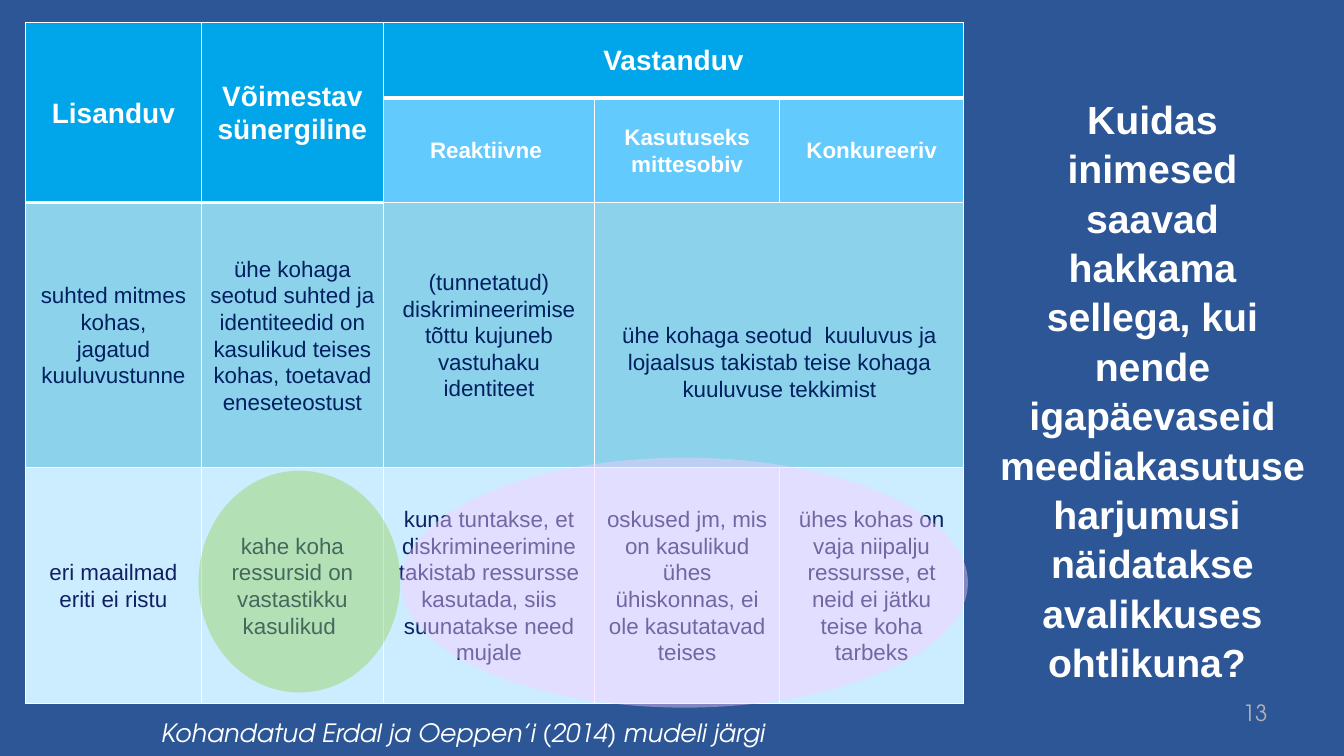
import pptx
import pptx.util
import pptx.dml.color
import pptx.enum.shapes
import pptx.enum.text
import pptx.oxml
import pptx.oxml.ns

Inches, Pt = pptx.util.Inches, pptx.util.Pt
PP_ALIGN = pptx.enum.text.PP_ALIGN
ANCHOR = pptx.enum.text.MSO_ANCHOR

COLORS = {
    "background": "2C5696", "white": "FFFFFF", "number": "B1B3B3",
    "header": "00A6E9", "subheader": "63CAFD",
    "relations": "8DD2EB", "relations_text": "002060",
    "resources": "CCECFF", "resources_text": "102064",
    "benefit": "92D050", "conflict": "FFCCFF",
}
BODY_FONT, ACCENT_FONT = "Arial", "TeX Gyre Adventor"

COLUMN_WIDTHS = [1.75, 1.8, 2.1, 1.83, 1.83]
ROW_HEIGHTS = [0.75, 1.04, 2.63, 2.34]
# Fill, text colour, size and weight of each table row
ROW_STYLES = [
    ("header", "white", 20, True),
    ("subheader", "white", 16, True),
    ("relations", "relations_text", 16, False),
    ("resources", "resources_text", 16, False),
]
# First and last cell of each merged area
MERGES = [((0, 0), (1, 0)), ((0, 1), (1, 1)), ((0, 2), (0, 4)), ((2, 3), (2, 4))]
TABLE_TEXT = [
    ["Lisanduv", "Võimestav sünergiline", "Vastanduv", None, None],
    [None, None, "Reaktiivne ", "Kasutuseks mittesobiv", "Konkureeriv"],
    ["suhted mitmes kohas,\njagatud kuuluvustunne",
     "ühe kohaga seotud suhted ja identiteedid on kasulikud teises kohas, "
     "toetavad eneseteostust",
     "(tunnetatud) diskrimineerimise tõttu kujuneb vastuhaku identiteet",
     "ühe kohaga seotud  kuuluvus ja lojaalsus takistab teise kohaga "
     "kuuluvuse tekkimist", None],
    ["eri maailmad eriti ei ristu",
     "kahe koha ressursid on vastastikku kasulikud ",
     "kuna tuntakse, et diskrimineerimine takistab ressursse kasutada, "
     "siis suunatakse need mujale",
     "oskused jm, mis on kasulikud ühes ühiskonnas, ei ole kasutatavad teises",
     "ühes kohas on vaja niipalju ressursse, et neid ei jätku teise koha tarbeks"],
]
QUESTION = ("Kuidas inimesed saavad hakkama sellega, kui nende igapäevaseid "
            "meediakasutuse harjumusi  näidatakse avalikkuses ohtlikuna? ")


def rgb(name):
    return pptx.dml.color.RGBColor.from_string(COLORS[name])


def format_text(frame, font, size, color, align, bold=False, italic=False, spacing=1):
    for paragraph in frame.paragraphs:
        paragraph.alignment = align
        paragraph.line_spacing = spacing
        for run in paragraph.runs:
            run.font.name = font
            run.font.size = Pt(size)
            run.font.bold = bold
            run.font.italic = italic
            run.font.color.rgb = rgb(color)


def set_borders(cell, widths):
    for side, width in widths.items():
        cell._tc.get_or_add_tcPr().append(pptx.oxml.parse_xml(
            f'<a:ln{side} {pptx.oxml.ns.nsdecls("a")} w="{Pt(width)}"><a:solidFill>'
            f'<a:srgbClr val="{COLORS["white"]}"/></a:solidFill></a:ln{side}>'))


def rule_below(row, col):
    """Header cells end with a thick rule, all other cells with a thin one."""
    header_end = 1 if col < 2 else 0
    return 3 if row == header_end else 1


def add_model_table(slide, left, top):
    table = slide.shapes.add_table(
        len(ROW_HEIGHTS), len(COLUMN_WIDTHS), Inches(left), Inches(top),
        Inches(sum(COLUMN_WIDTHS)), Inches(sum(ROW_HEIGHTS))).table
    table.first_row = table.horz_banding = False
    for column, width in zip(table.columns, COLUMN_WIDTHS):
        column.width = Inches(width)
    for table_row, height in zip(table.rows, ROW_HEIGHTS):
        table_row.height = Inches(height)
    for first, last in MERGES:
        table.cell(*first).merge(table.cell(*last))

    for row, (fill, color, size, bold) in enumerate(ROW_STYLES):
        for col, text in enumerate(TABLE_TEXT[row]):
            cell = table.cell(row, col)
            set_borders(cell, {"L": 1, "R": 1, "T": rule_below(row - 1, col),
                               "B": rule_below(row, col)})
            cell.fill.solid()
            cell.fill.fore_color.rgb = rgb(fill)
            cell.margin_left = cell.margin_right = Inches(0.07)
            cell.margin_top = cell.margin_bottom = 0
            cell.vertical_anchor = ANCHOR.MIDDLE
            if text:
                cell.text_frame.text = text
                format_text(cell.text_frame, BODY_FONT, size, color,
                            PP_ALIGN.CENTER, bold, spacing=1.07)
    # The shared loyalty cell sits below the middle of its row
    table.cell(2, 3).margin_top = Inches(0.53)


def add_question(slide, left, top, width, height):
    question = slide.shapes.title
    question.left, question.top = Inches(left), Inches(top)
    question.width, question.height = Inches(width), Inches(height)
    frame = question.text_frame
    frame.text = QUESTION
    frame.word_wrap = True
    frame.auto_size = pptx.enum.text.MSO_AUTO_SIZE.NONE
    frame.vertical_anchor = ANCHOR.TOP
    format_text(frame, BODY_FONT, 28, "white", PP_ALIGN.CENTER, bold=True, spacing=1.05)


def add_note(slide, box, text, size, color, align, anchor, italic=False):
    frame = slide.shapes.add_textbox(*map(Inches, box)).text_frame
    frame.word_wrap = True
    frame.vertical_anchor = anchor
    frame.text = text
    format_text(frame, ACCENT_FONT, size, color, align, italic=italic)


def add_highlight(slide, box, color):
    highlight = slide.shapes.add_shape(
        pptx.enum.shapes.MSO_SHAPE.OVAL, *map(Inches, box))
    highlight.shadow.inherit = False
    highlight.line.fill.background()
    highlight.fill.solid()
    highlight.fill.fore_color.rgb = rgb(color)
    tint = highlight._element.spPr.find(".//" + pptx.oxml.ns.qn("a:srgbClr"))
    tint.append(pptx.oxml.parse_xml(
        f'<a:alpha {pptx.oxml.ns.nsdecls("a")} val="41000"/>'))


def build_model_slide(prs):
    slide = prs.slides.add_slide(prs.slide_layouts.get_by_name("Title Only"))
    slide.background.fill.solid()
    slide.background.fill.fore_color.rgb = rgb("background")
    # Page number, table and source
    add_note(slide, (11.17, 6.87, 1.5, 0.4), "13", 16, "number",
             PP_ALIGN.RIGHT, ANCHOR.MIDDLE)
    add_model_table(slide, 0.25, 0.22)
    add_note(slide, (1.5, 7.07, 10.58, 0.4),
             "Kohandatud Erdal ja Oeppen’i (2014) mudeli järgi", 18, "white",
             PP_ALIGN.LEFT, ANCHOR.TOP, italic=True)
    # Question beside the table
    add_question(slide, 9.8, 0.87, 3.26, 6.53)
    # Highlights over the resource row
    add_highlight(slide, (1.97, 4.67, 2, 2.2), "benefit")
    add_highlight(slide, (3.98, 4.54, 5.62, 2.48), "conflict")


def main():
    prs = pptx.Presentation()
    prs.slide_width, prs.slide_height = Inches(13.33), Inches(7.5)
    build_model_slide(prs)
    prs.save("out.pptx")


if __name__ == "__main__":
    main()
